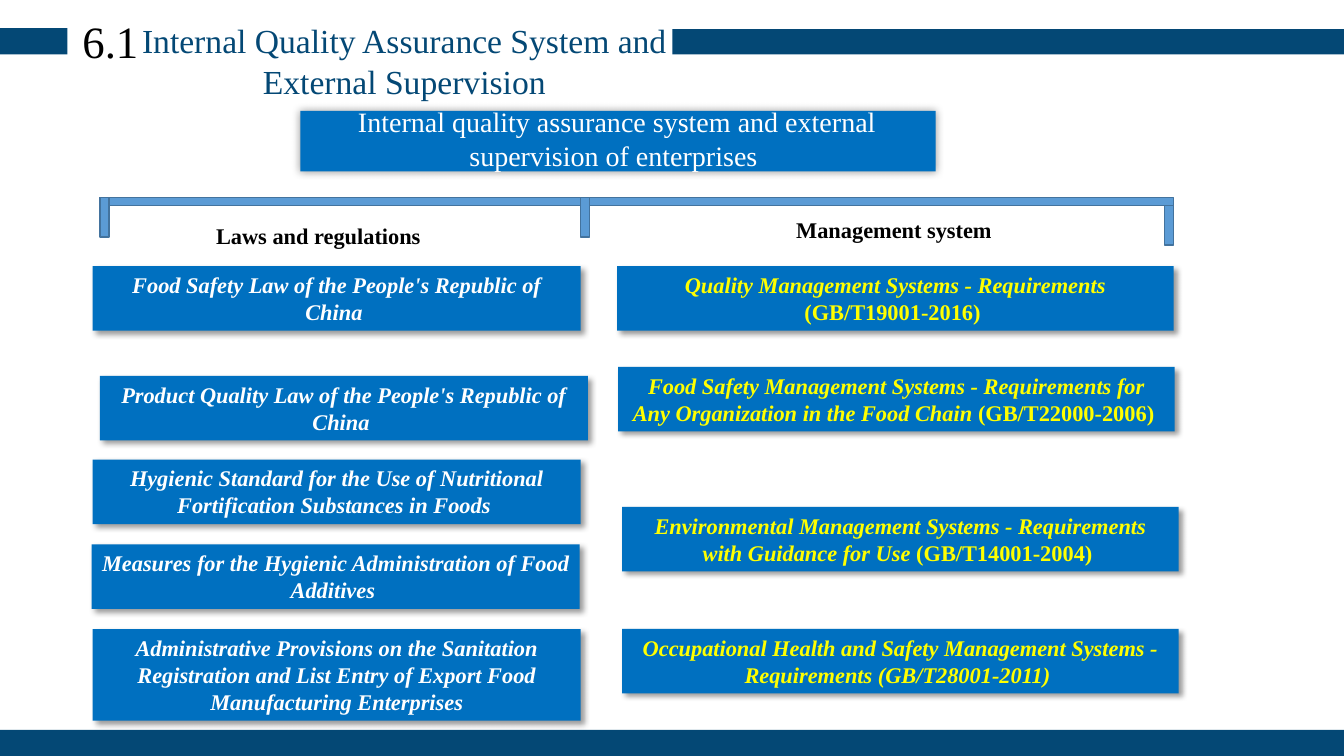
from lxml.etree import SubElement
from pptx import Presentation
from pptx.dml.color import RGBColor
from pptx.enum.shapes import MSO_SHAPE
from pptx.enum.text import MSO_ANCHOR as ANCHOR, MSO_AUTO_SIZE as AUTO, PP_ALIGN as ALIGN
from pptx.oxml.ns import qn
from pptx.util import Inches, Pt

NAVY, BLUE, SKY, STEEL = "044875", "0070C0", "5B9BD5", "43739E"
WHITE, YELLOW, BLACK = "FFFFFF", "FFFF00", "000000"


def rgb(value):
    return RGBColor.from_string(value)


class SlideBuilder:
    font = "Times New Roman"

    def __init__(self, prs):
        self.slide = prs.slides.add_slide(prs.slide_layouts[5])

    def add_text(self, sp, runs, size, color, bold=False, anchor=ANCHOR.TOP):
        tf = sp.text_frame
        tf.word_wrap = True
        tf.auto_size = AUTO.NONE
        tf.vertical_anchor = anchor
        p = tf.paragraphs[0]
        p.alignment = ALIGN.CENTER
        p.line_spacing = 1.0
        for text, italic in runs:
            r = p.add_run()
            r.text = text
            f = r.font
            f.name, f.size = self.font, Pt(size)
            f.bold, f.italic = bold, italic
            f.color.rgb = rgb(color)

    def title(self, box, text, size, color):
        sp = self.slide.shapes.title
        sp.left, sp.top, sp.width, sp.height = map(Inches, box)
        self.add_text(sp, [(text, False)], size, color)

    def label(self, box, text, size, color, bold=False, anchor=ANCHOR.TOP):
        sp = self.slide.shapes.add_textbox(*map(Inches, box))
        self.add_text(sp, [(text, False)], size, color, bold, anchor)

    def rect(self, box, fill, line=None):
        sp = self.slide.shapes.add_shape(MSO_SHAPE.RECTANGLE, *map(Inches, box))
        sp.fill.solid()
        sp.fill.fore_color.rgb = rgb(fill)
        if line:
            sp.line.color.rgb = rgb(line)
            sp.line.width = Pt(1)
        else:
            sp.line.fill.background()
        sp.shadow.inherit = False
        return sp

    def raised(self, box, fill, blur=4, dist=3, angle=45):
        sp = self.rect(box, fill)
        effects = sp._element.spPr.find(qn("a:effectLst"))
        shadow = SubElement(effects, qn("a:outerShdw"), blurRad=str(Pt(blur)),
                            dist=str(Pt(dist)), dir=str(angle * 60000),
                            algn="ctr", rotWithShape="0")
        tint = SubElement(shadow, qn("a:srgbClr"), val=BLACK)
        SubElement(tint, qn("a:alpha"), val="40000")
        return sp

    def card(self, box, runs, color):
        self.add_text(self.raised(box, BLUE), runs, 16, color, bold=True)


LAWS = [
    (0.92, 2.64, 0.64, "Food Safety Law of the People's Republic of China "),
    (0.99, 3.73, 0.64, "Product Quality Law of the People's Republic of China "),
    (0.92, 4.56, 0.64, "Hygienic Standard for the Use of Nutritional "
                       "Fortification Substances in Foods "),
    (0.91, 5.4, 0.64, "Measures for the Hygienic Administration of Food Additives "),
    (0.92, 6.24, 0.91, "Administrative Provisions on the Sanitation Registration and "
                       "List Entry of Export Food Manufacturing Enterprises"),
]
STANDARDS = [
    (6.12, 2.64, [("Quality Management Systems - Requirements ", True),
                  ("(GB/T19001-2016) ", False)]),
    (6.13, 3.64, [("Food Safety Management Systems - Requirements for Any "
                   "Organization in the Food Chain ", True),
                  ("(GB/T22000-2006) ", False)]),
    (6.17, 5.03, [("Environmental Management Systems - Requirements with "
                   "Guidance for Use", True),
                  (" (GB/T14001-2004) ", False)]),
    (6.17, 6.24, [("Occupational Health and Safety Management Systems - "
                   "Requirements (GB/T28001-2011) ", True)]),
]


def main():
    prs = Presentation()
    prs.slide_width, prs.slide_height = Inches(13.33), Inches(7.5)
    s = SlideBuilder(prs)

    for bar in [(0, 0.28, 0.67, 0.26), (6.67, 0.29, 6.66, 0.25), (0, 7.24, 13.33, 0.26)]:
        s.rect(bar, NAVY)
    s.title((0.99, 0.15, 6.04, 0.91),
            "Internal Quality Assurance System and External Supervision", 24, NAVY)
    s.label((0.67, 0.09, 0.85, 0.64), "6.1", 32, BLACK)

    s.raised((2.98, 1.1, 6.3, 0.6), BLUE, blur=6, dist=0, angle=90)
    s.label((2.96, 1.06, 6.32, 0.62),
            "Internal quality assurance system and external supervision of enterprises ",
            20, WHITE, anchor=ANCHOR.MIDDLE)

    s.rect((0.99, 1.96, 10.65, 0.08), SKY, STEEL)
    for left, top in [(0.99, 1.96), (5.76, 1.96), (11.55, 2.04)]:
        s.rect((left, top, 0.09, 0.39), SKY, STEEL)
    s.label((1.97, 2.15, 2.43, 0.37), "Laws and regulations ", 16, BLACK, bold=True)
    s.label((7.61, 2.1, 2.57, 0.37), "Management system ", 16, BLACK, bold=True)

    for left, top, height, text in LAWS:
        s.card((left, top, 4.84, height), [(text, True)], WHITE)
    for left, top, runs in STANDARDS:
        s.card((left, top, 5.52, 0.64), runs, YELLOW)

    prs.save("out.pptx")


if __name__ == "__main__":
    main()
